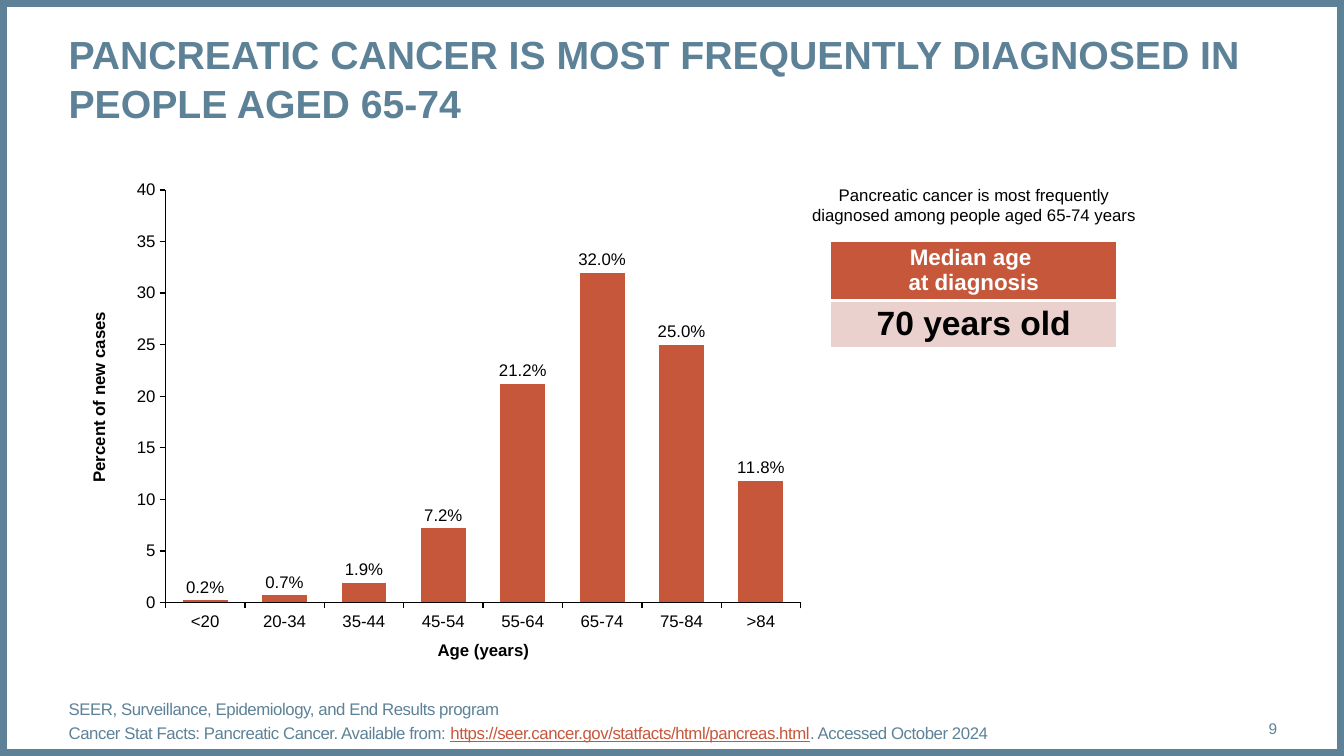
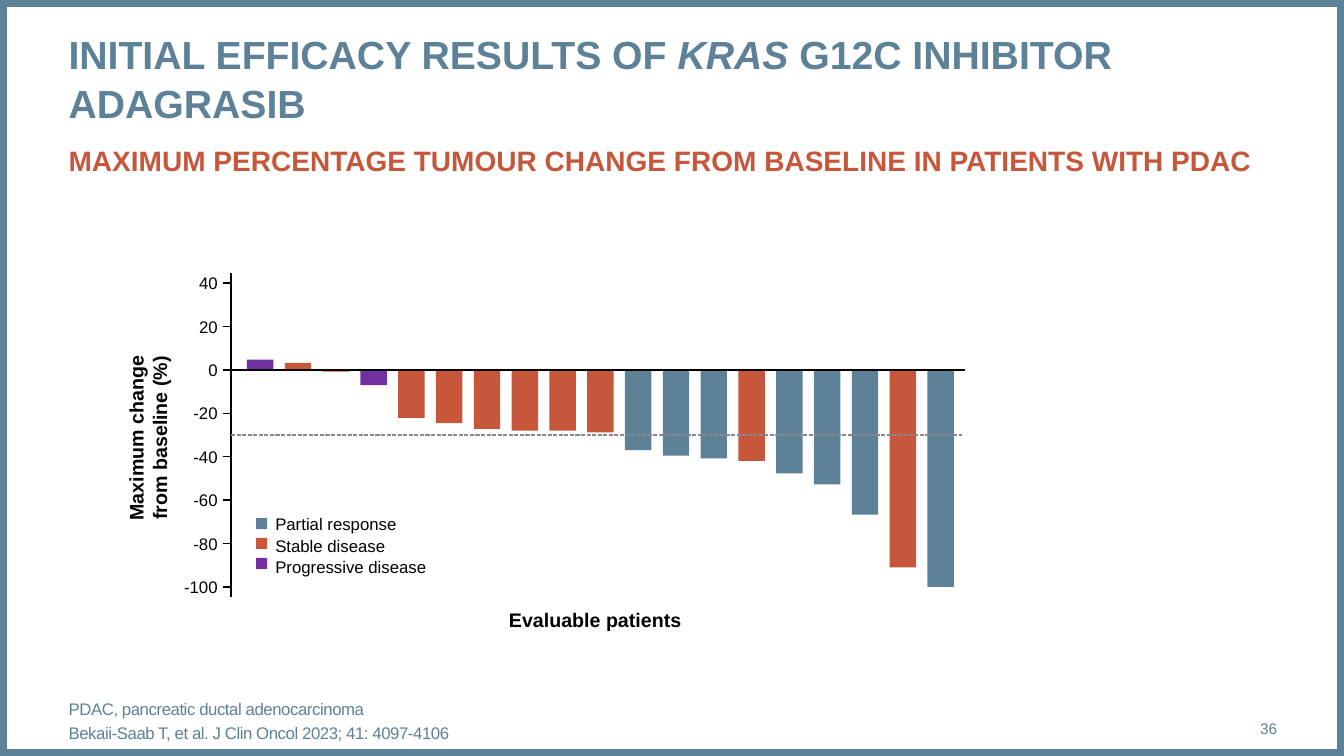
"""Build two pancreatic cancer slides: age at diagnosis and tumour response."""
from dataclasses import dataclass
from typing import Optional, Sequence, Union

from lxml import etree
from pptx import Presentation
from pptx.chart.data import CategoryChartData
from pptx.dml.color import RGBColor
from pptx.enum import chart as ch, dml, shapes, text
from pptx.oxml import parse_xml
from pptx.oxml.ns import nsdecls, qn
from pptx.util import Pt

FONT = "Arial"
BLUE, ORANGE, PURPLE = "5D8298", "C6573B", "7030A0"
PINK, GREY, BLACK, WHITE = "EAD1CE", "8B878B", "000000", "FFFFFF"
WIDTH, HEIGHT = 960, 540
MARGIN, CONTENT = 49, 863.3
LEFT, CENTER, RIGHT = text.PP_ALIGN.LEFT, text.PP_ALIGN.CENTER, text.PP_ALIGN.RIGHT
TOP, MIDDLE = text.MSO_ANCHOR.TOP, text.MSO_ANCHOR.MIDDLE


@dataclass(frozen=True)
class Box:
    x: float
    y: float
    w: float
    h: float

    def lengths(self) -> tuple:
        return Pt(self.x), Pt(self.y), Pt(self.w), Pt(self.h)


@dataclass(frozen=True)
class Run:
    text: str
    color: Optional[str] = None
    italic: bool = False
    underline: bool = False


@dataclass(frozen=True)
class Response:
    label: str
    color: str


@dataclass(frozen=True)
class Patient:
    change: float
    response: Response


@dataclass(frozen=True)
class MedianRow:
    text: str
    size: float
    color: str
    fill: str
    height: float
    rule: float


Paragraph = Union[str, Sequence[Run]]

PARTIAL = Response("Partial response", BLUE)
STABLE = Response("Stable disease", ORANGE)
PROGRESSIVE = Response("Progressive disease", PURPLE)
RESPONSES = (PARTIAL, STABLE, PROGRESSIVE)
PATIENTS = (
    Patient(4.7, PROGRESSIVE), Patient(3.2, STABLE), Patient(-0.8, STABLE),
    Patient(-7, PROGRESSIVE),
    *(Patient(v, STABLE) for v in (-22.2, -24.6, -27.2, -28, -28, -28.8)),
    *(Patient(v, PARTIAL) for v in (-37, -39.5, -40.8)), Patient(-42, STABLE),
    *(Patient(v, PARTIAL) for v in (-47.7, -52.8, -66.7)),
    Patient(-91, STABLE), Patient(-100, PARTIAL),
)
NEW_CASES = {"<20": 0.2, "20-34": 0.7, "35-44": 1.9, "45-54": 7.2,
             "55-64": 21.2, "65-74": 32, "75-84": 25, ">84": 11.8}
MEDIAN_ROWS = (
    MedianRow("Median age \nat diagnosis", 16, WHITE, ORANGE, 42.5, 3),
    MedianRow("70 years old", 24, BLACK, PINK, 34, 1),
)


def rgb(value: str) -> RGBColor:
    return RGBColor.from_string(value)


def write(tf, content: Union[str, Sequence[Paragraph]], *, size: float = 12,
          color: str = BLACK, bold: bool = False, align=LEFT, anchor=TOP,
          wrap: bool = True, before: float = 0, line: Optional[float] = None,
          spacing: int = 0, margin: float = 0) -> None:
    tf.word_wrap = wrap
    tf.auto_size = text.MSO_AUTO_SIZE.NONE
    tf.vertical_anchor = anchor
    tf.margin_left = tf.margin_right = tf.margin_top = tf.margin_bottom = Pt(margin)
    paragraphs = [content] if isinstance(content, str) else content
    for i, paragraph in enumerate(paragraphs):
        p = tf.add_paragraph() if i else tf.paragraphs[0]
        pPr = p._p.get_or_add_pPr()
        pPr.set("marL", "0")
        pPr.set("indent", "0")
        etree.SubElement(pPr, qn("a:buNone"))
        p.alignment = align
        p.space_before = Pt(before if i else 0)
        if line:
            p.line_spacing = line
        for run in [Run(paragraph)] if isinstance(paragraph, str) else paragraph:
            for n, part in enumerate(run.text.split("\n")):
                if n:
                    p.add_line_break()
                r = p.add_run()
                r.text = part
                style(r.font, size, run.color or color, bold)
                r.font.italic, r.font.underline = run.italic, run.underline
                if spacing:
                    r._r.get_or_add_rPr().set("spc", str(spacing))


def style(font, size: float, color: str = BLACK, bold: bool = False) -> None:
    font.name, font.size, font.bold = FONT, Pt(size), bold
    font.color.rgb = rgb(color)


def fill_placeholder(sp, box: Box, content, **fmt) -> None:
    sp.left, sp.top, sp.width, sp.height = box.lengths()
    write(sp.text_frame, content, **fmt)


def add_text(s, box: Box, content, *, rotation: float = 0, **fmt) -> None:
    sp = s.shapes.add_textbox(*box.lengths())
    sp.rotation = rotation
    write(sp.text_frame, content, **fmt)


def add_rect(s, box: Box, fill: str):
    sp = s.shapes.add_shape(shapes.MSO_SHAPE.RECTANGLE, *box.lengths())
    sp.shadow.inherit = False
    sp.fill.solid()
    sp.fill.fore_color.rgb = rgb(fill)
    sp.line.fill.background()
    return sp


def add_line(s, x1: float, y1: float, x2: float, y2: float, color: str = BLACK,
             dash=None) -> None:
    sp = s.shapes.add_connector(shapes.MSO_CONNECTOR.STRAIGHT,
                                Pt(x1), Pt(y1), Pt(x2), Pt(y2))
    sp.line.color.rgb = rgb(color)
    sp.line.width = Pt(1)
    if dash:
        sp.line.dash_style = dash
    etree.SubElement(sp._element.spPr, qn("a:effectLst"))


def add_master_frame(prs, s) -> None:
    sp = add_rect(s, Box(0, 0, WIDTH, HEIGHT), WHITE)
    sp.fill.background()
    sp.line.color.rgb = rgb(BLUE)
    sp.line.width = Pt(10)
    sp.element.xpath("./p:nvSpPr/p:cNvPr")[0].set("id", "99")
    prs.slide_master.shapes.element.insert(2, sp.element)


def add_slide(prs, layout: int, title: Paragraph, number: int, footer_idx: int,
              footer: Sequence[Paragraph]):
    s = prs.slides.add_slide(prs.slide_layouts[layout])
    fill_placeholder(s.shapes.title, Box(MARGIN, 20.2, CONTENT, 67.7), [title],
                     size=28, color=BLUE, bold=True, line=1.04)
    fill_placeholder(s.placeholders[footer_idx], Box(MARGIN, 500.4, 801.4, 28.8),
                     footer, color=BLUE, anchor=MIDDLE, before=3, spacing=-30)
    add_text(s, Box(850.3, 506.2, 62, 28.8), str(number), size=11, color=BLUE,
             align=RIGHT, anchor=MIDDLE)
    return s


def add_median_table(s) -> None:
    box = Box(593.3, 172.1, 204.5, sum(row.height for row in MEDIAN_ROWS))
    table = s.shapes.add_table(len(MEDIAN_ROWS), 1, *box.lengths()).table
    table.horz_banding = False
    for i, row in enumerate(MEDIAN_ROWS):
        table.rows[i].height = Pt(row.height)
        cell = table.cell(i, 0)
        write(cell.text_frame, row.text, size=row.size, color=row.color,
              bold=True, align=CENTER)
        cell.vertical_anchor = MIDDLE
        cell.margin_top = cell.margin_bottom = Pt(2.8)
        above = MEDIAN_ROWS[i - 1].rule if i else 1
        tcPr = cell._tc.get_or_add_tcPr()
        for side, width in zip("LRTB", (1, 1, above, row.rule)):
            tcPr.append(parse_xml(
                f'<a:ln{side} {nsdecls("a")} w="{Pt(width)}"><a:solidFill>'
                f'<a:srgbClr val="{WHITE}"/></a:solidFill></a:ln{side}>'))
        cell.fill.solid()
        cell.fill.fore_color.rgb = rgb(row.fill)


def set_plot_layout(chart, x: float, y: float, w: float, h: float) -> None:
    area = chart._chartSpace.chart.plotArea
    for old in area.findall(qn("c:layout")):
        area.remove(old)
    sizes = "".join(f'<c:{k} val="{v}"/>' for k, v in zip("xywh", (x, y, w, h)))
    area.insert(0, parse_xml(
        f'<c:layout {nsdecls("c")}><c:manualLayout><c:layoutTarget val="inner"/>'
        f'<c:xMode val="edge"/><c:yMode val="edge"/>{sizes}'
        '</c:manualLayout></c:layout>'))


def add_age_chart(s) -> None:
    data = CategoryChartData(number_format="General")
    data.categories = list(NEW_CASES)
    data.add_series("Series 1", list(NEW_CASES.values()))
    box = Box(88.6, 122.4, 493.2, 334.8)
    chart = s.shapes.add_chart(ch.XL_CHART_TYPE.COLUMN_CLUSTERED,
                               *box.lengths(), data).chart
    chart.has_title = chart.has_legend = False
    style(chart.font, 12)
    set_plot_layout(chart, 0.06, 0.04, 0.92, 0.88)
    for axis in (chart.category_axis, chart.value_axis):
        axis.has_major_gridlines = False
        axis.major_tick_mark = ch.XL_TICK_MARK.OUTSIDE
        axis.minor_tick_mark = ch.XL_TICK_MARK.NONE
        axis.format.line.color.rgb = rgb(BLACK)
        axis.format.line.width = Pt(1)
        style(axis.tick_labels.font, 12)
    axis = chart.value_axis
    axis.minimum_scale, axis.maximum_scale, axis.major_unit = 0, 40, 5
    plot = chart.plots[0]
    plot.gap_width, plot.vary_by_categories = 77, False
    series = plot.series[0]
    series.format.fill.solid()
    series.format.fill.fore_color.rgb = rgb(ORANGE)
    labels = series.data_labels
    labels.show_value = True
    labels.number_format, labels.number_format_is_linked = '0.0"%"', False
    labels.position = ch.XL_LABEL_POSITION.OUTSIDE_END
    style(labels.font, 12)


def add_waterfall(s) -> None:
    axis_x, zero, scale, right = 165, 264.2, 1.55, 689
    first, pitch, bar = 176.4, 27, 18.9
    for i, patient in enumerate(PATIENTS):
        h = abs(patient.change) * scale
        y = zero - h if patient.change > 0 else zero
        add_rect(s, Box(first + i * pitch, y, bar, h), patient.response.color)
    add_line(s, axis_x, 426.2, axis_x, 195.1)
    for value in range(-100, 41, 20):
        y = zero - value * scale
        w = 6.7 * len(str(abs(value))) + (4 if value < 0 else 0)
        add_text(s, Box(155.5 - w, y - 7.2, w, 14.4), str(value),
                 align=RIGHT, wrap=False)
        add_line(s, axis_x - 6, y, axis_x if value else right, y)
    target = zero + 30 * scale
    add_line(s, axis_x, target, right - 2, target, GREY,
             dml.MSO_LINE.SQUARE_DOT)
    for i, response in enumerate(RESPONSES):
        add_rect(s, Box(182.9, 370 + i * 14.2, 7.9, 7.9), response.color)
    add_text(s, Box(196.6, 366.5, 109.4, 43.9), [r.label for r in RESPONSES],
             wrap=False, line=1.05)


def build_age_slide(prs):
    s = add_slide(
        prs, 1,
        "PANCREATIC CANCER IS MOST FREQUENTLY DIAGNOSED IN PEOPLE AGED 65-74", 9, 1,
        ["SEER, Surveillance, Epidemiology, and End Results program",
         [Run("Cancer Stat Facts: Pancreatic Cancer. Available from: "),
          Run("https://seer.cancer.gov/statfacts/html/pancreas.html", ORANGE,
              underline=True),
          Run(". Accessed October 2024")]])
    add_median_table(s)
    add_text(s, Box(573.8, 131.8, 244, 28.8), "Pancreatic cancer is most frequently "
             "diagnosed among people aged 65-74 years", align=CENTER)
    add_age_chart(s)
    add_text(s, Box(312.5, 457.2, 65.5, 14.4), "Age (years)", bold=True,
             align=CENTER, wrap=False)
    add_text(s, Box(-10, 276.5, 160.6, 14.4), "Percent of new cases", bold=True,
             align=CENTER, rotation=270)
    return s


def build_response_slide(prs) -> None:
    s = add_slide(
        prs, 3,
        [Run("INITIAL EFFICACY RESULTS OF "), Run("KRAS ", italic=True),
         Run("G12C INHIBITOR ADAGRASIB")], 36, 2,
        ["PDAC, pancreatic ductal adenocarcinoma",
         "Bekaii-Saab T, et al. J Clin Oncol 2023; 41: 4097-4106"])
    fill_placeholder(
        s.placeholders[1], Box(MARGIN, 102.2, CONTENT, 38.9),
        "MAXIMUM PERCENTAGE TUMOUR CHANGE FROM BASELINE IN PATIENTS WITH PDAC",
        size=20, color=ORANGE, bold=True)
    add_text(s, Box(-10.8, 295.9, 232.6, 33.8), "Maximum change\nfrom baseline (%)",
             size=14, bold=True, align=CENTER, rotation=270)
    add_waterfall(s)
    add_text(s, Box(363.6, 434.2, 124.6, 17.3), "Evaluable patients", size=14,
             bold=True, wrap=False)


def main() -> None:
    prs = Presentation()
    prs.slide_width, prs.slide_height = Pt(WIDTH), Pt(HEIGHT)
    add_master_frame(prs, build_age_slide(prs))
    build_response_slide(prs)
    prs.save("out.pptx")


if __name__ == "__main__":
    main()
